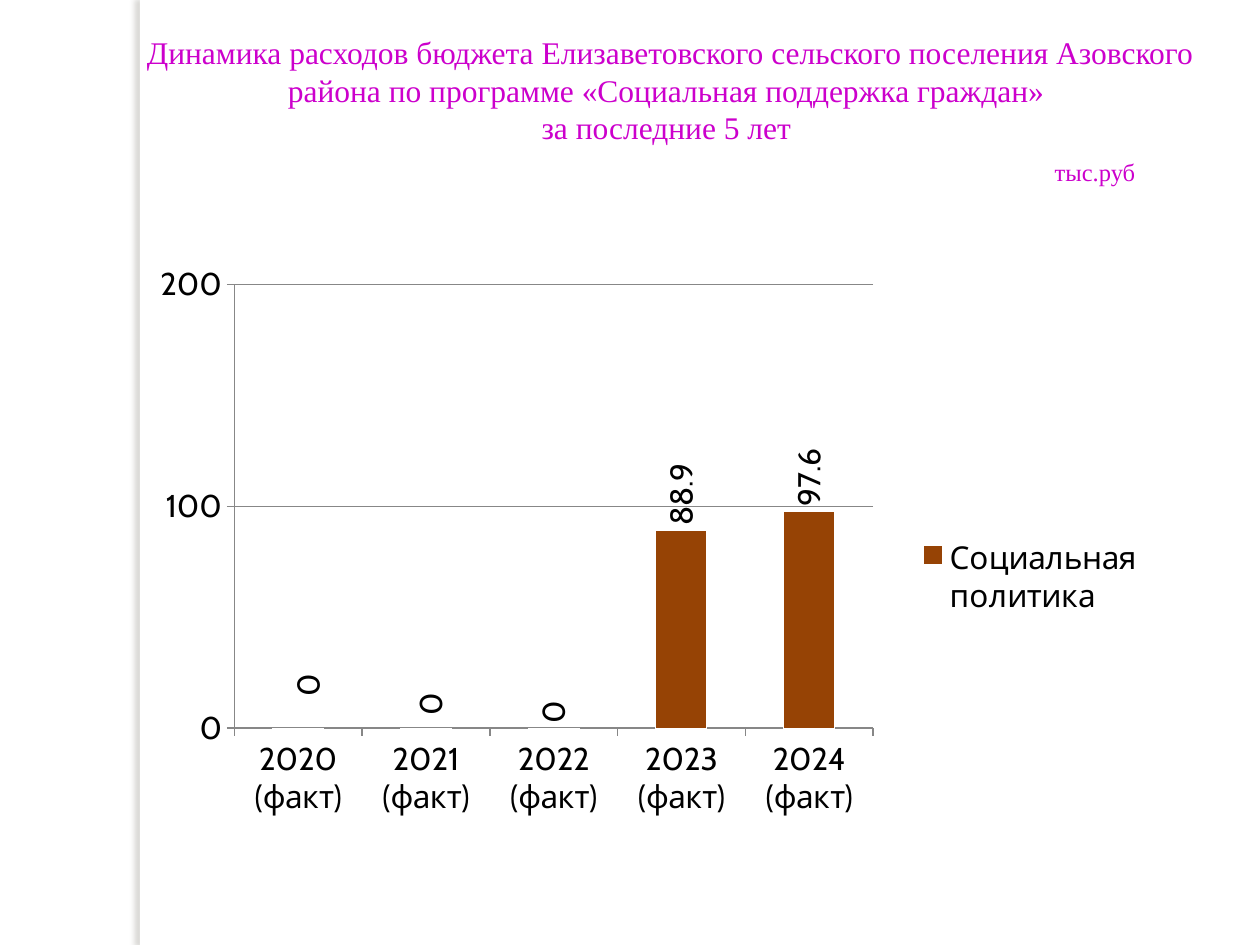
import pptx
import pptx.chart.data
import pptx.dml.color
import pptx.enum.chart
import pptx.enum.text
import pptx.oxml
import pptx.oxml.ns
import pptx.util
from pptx.util import Inches

COLORS = {"title": "CC00CC", "bar": "964305", "text": "000000",
          "axis": "878787", "white": "FFFFFF", "shadow": "736F63"}
EXPENSES = {"2020 (факт)": 0, "2021 (факт)": 0, "2022 (факт)": 0,
            "2023 (факт)": 88.9, "2024 (факт)": 97.6}
LABEL_SHIFTS = {0: (Inches(0.08), Inches(-0.21)),
                1: (Inches(0.04), Inches(-0.06))}


def rgb(name):
    """Return the named palette colour."""
    return pptx.dml.color.RGBColor.from_string(COLORS[name])


def style_font(font, name, size, color):
    """Set the typeface, size and colour of a font."""
    font.name = name
    font.size = pptx.util.Pt(size)
    font.color.rgb = rgb(color)


def set_layout(parent, index, size, box, inner=False):
    """Lay out a chart element by lengths within a chart of the given size."""
    for old in parent.findall(pptx.oxml.ns.qn("c:layout")):
        parent.remove(old)
    parts = ['<c:layoutTarget val="inner"/>'] if inner else []
    if len(box) == 4:
        parts += ['<c:xMode val="edge"/>', '<c:yMode val="edge"/>']
    for tag, length, whole in zip("xywh", box, size * 2):
        parts.append(f'<c:{tag} val="{length / whole}"/>')
    parent.insert(index, pptx.oxml.parse_xml(
        f'<c:layout {pptx.oxml.ns.nsdecls("c")}><c:manualLayout>'
        f'{"".join(parts)}</c:manualLayout></c:layout>'))


def add_side_strip(slide, left, top, width, height):
    """Add the white strip behind the title, with a soft shadow to the left."""
    sp = slide.shapes.add_shape(1, left, top, width, height)
    sp.fill.solid()
    sp.fill.fore_color.rgb = rgb("white")
    sp.line.fill.background()
    sp.shadow.inherit = False
    effects = sp._element.spPr.find(pptx.oxml.ns.qn("a:effectLst"))
    effects.append(pptx.oxml.parse_xml(
        f'<a:outerShdw {pptx.oxml.ns.nsdecls("a")} blurRad="{pptx.util.Pt(3)}" '
        f'dist="{pptx.util.Pt(3)}" dir="10800000" algn="tl" rotWithShape="0">'
        f'<a:srgbClr val="{COLORS["shadow"]}"><a:alpha val="25000"/></a:srgbClr>'
        '</a:outerShdw>'))
    slide.shapes.title._element.addprevious(sp._element)


def add_title(slide, left, top, width, height):
    """Place the title with the unit of measure on its last line."""
    title = slide.shapes.title
    title.left, title.top, title.width, title.height = left, top, width, height
    tf = title.text_frame
    tf.text = ("Динамика расходов бюджета Елизаветовского сельского поселения "
               "Азовского района по программе «Социальная поддержка граждан» \n"
               "за последние 5 лет \nтыс.руб")
    tf.word_wrap = True
    tf.auto_size = pptx.enum.text.MSO_AUTO_SIZE.NONE
    tf.vertical_anchor = pptx.enum.text.MSO_ANCHOR.TOP
    for p, size in zip(tf.paragraphs, (18, 18, 14)):
        p.alignment = pptx.enum.text.PP_ALIGN.CENTER
        p.line_spacing = 1.0
        p.space_before = pptx.util.Pt(0)
        style_font(p.runs[0].font, "Times New Roman", size, "title")
    unit = tf.paragraphs[-1]
    unit.alignment = pptx.enum.text.PP_ALIGN.LEFT
    unit.space_before = pptx.util.Pt(6)
    unit._p.get_or_add_pPr().set("marL", str(Inches(7.36)))


def style_axes(chart):
    """Format the axes and gridlines."""
    cat, val = chart.category_axis, chart.value_axis
    cat.tick_label_position = pptx.enum.chart.XL_TICK_LABEL_POSITION.LOW
    val.minimum_scale, val.maximum_scale, val.major_unit = 0, 200, 100
    val.has_major_gridlines = True
    for axis in (cat, val):
        axis.major_tick_mark = pptx.enum.chart.XL_TICK_MARK.OUTSIDE
    for line in (cat.format.line, val.format.line, val.major_gridlines.format.line):
        line.color.rgb = rgb("axis")
        line.width = pptx.util.Pt(0.75)


def style_series(series, size):
    """Colour the columns and turn their value labels upright."""
    series.invert_if_negative = False
    series.format.fill.solid()
    series.format.fill.fore_color.rgb = rgb("bar")
    series.format.line.color.rgb = rgb("white")
    labels = series.data_labels
    labels.show_value = True
    outside = pptx.enum.chart.XL_LABEL_POSITION.OUTSIDE_END
    for label in [labels] + [series.points[i].data_label for i in LABEL_SHIFTS]:
        label.position = outside
        style_font(label.font, "Cabin", 18, "text")
    for body in labels._element.iter(pptx.oxml.ns.qn("a:bodyPr")):
        body.set("rot", "-5400000")
        body.set("vert", "horz")
    point_labels = labels._element.findall(pptx.oxml.ns.qn("c:dLbl"))
    for label, shift in zip(point_labels, LABEL_SHIFTS.values()):
        set_layout(label, 1, size, shift)


def add_expense_chart(slide, left, top, width, height):
    """Add the column chart of yearly expenses."""
    data = pptx.chart.data.CategoryChartData()
    data.categories = list(EXPENSES)
    data.add_series("Социальная политика", list(EXPENSES.values()))
    chart = slide.shapes.add_chart(
        pptx.enum.chart.XL_CHART_TYPE.COLUMN_CLUSTERED,
        left, top, width, height, data).chart
    size = (width, height)
    chart.has_title = False
    style_font(chart.font, "Cabin", 18, "text")
    style_axes(chart)
    plot = chart.plots[0]
    plot.gap_width = 150
    plot.vary_by_categories = False
    style_series(plot.series[0], size)
    chart.has_legend = True
    chart.legend.position = pptx.enum.chart.XL_LEGEND_POSITION.RIGHT
    chart.legend.include_in_layout = False
    set_layout(chart.legend._element, 1, size,
               (Inches(6.05), Inches(2.12), Inches(1.97), Inches(0.73)))
    set_layout(chart._chartSpace.chart.plotArea, 0, size,
               (Inches(0.72), Inches(0.16), Inches(5.07), Inches(3.52)), inner=True)


def main():
    """Build and save the slide."""
    prs = pptx.Presentation()
    prs.slide_width, prs.slide_height = Inches(10), Inches(7.5)
    slide = prs.slides.add_slide(prs.slide_layouts[5])
    slide.background.fill.solid()
    slide.background.fill.fore_color.rgb = rgb("white")
    add_side_strip(slide, Inches(1.11), Inches(0), Inches(0.08), Inches(7.5))
    add_title(slide, Inches(0.91), Inches(0.21), Inches(8.82), Inches(1.35))
    add_expense_chart(slide, Inches(1.14), Inches(2.1), Inches(8.22), Inches(4.57))
    prs.save("out.pptx")


if __name__ == "__main__":
    main()
